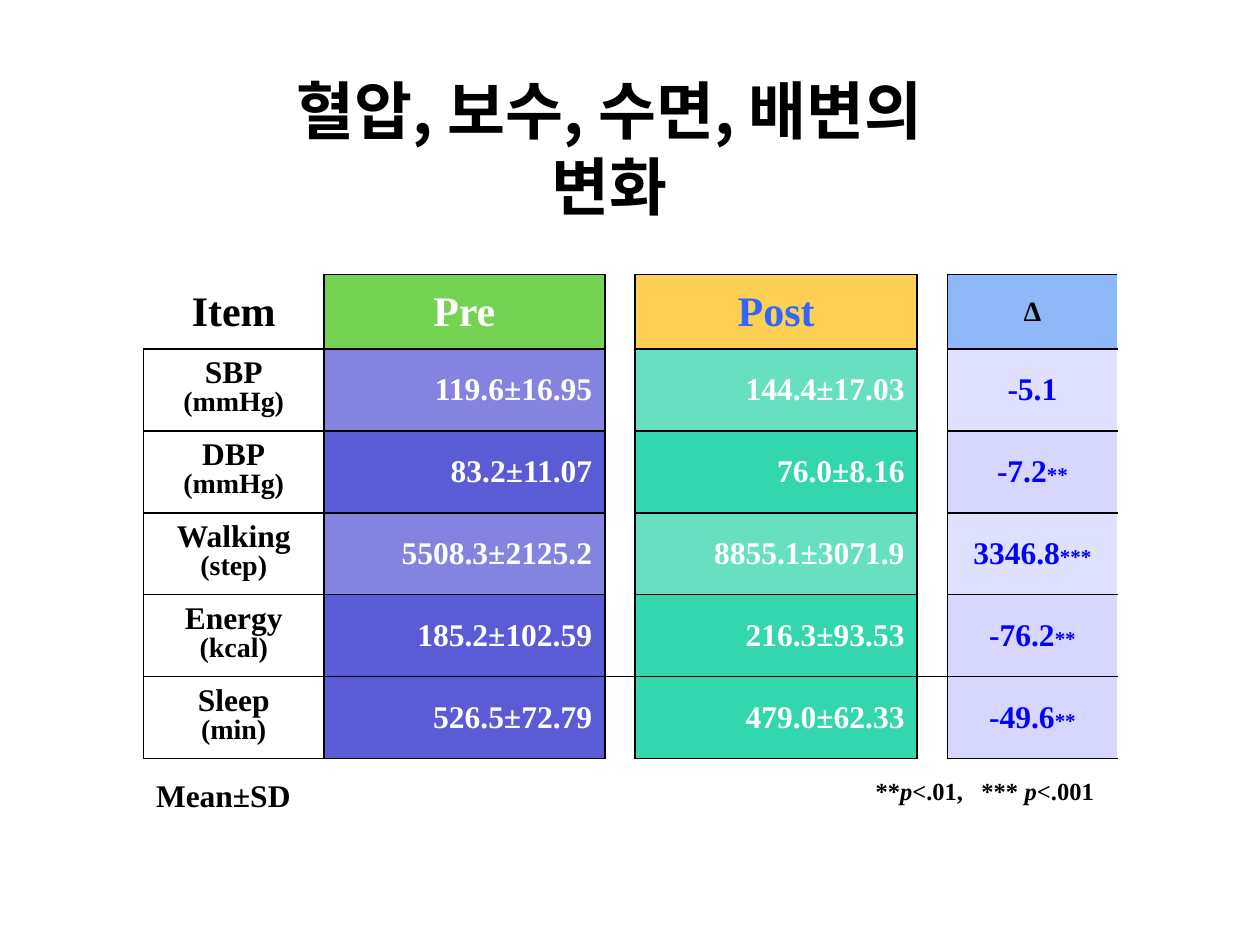
from dataclasses import dataclass

from lxml import etree
from pptx import Presentation
from pptx.dml.color import RGBColor
from pptx.enum.text import MSO_ANCHOR, MSO_AUTO_SIZE, PP_ALIGN
from pptx.oxml.ns import qn
from pptx.util import Inches, Pt

CENTER, LEFT, RIGHT = PP_ALIGN.CENTER, PP_ALIGN.LEFT, PP_ALIGN.RIGHT
TOP, MIDDLE = MSO_ANCHOR.TOP, MSO_ANCHOR.MIDDLE
NO_FIT = MSO_AUTO_SIZE.NONE
TITLE_ONLY = 5


@dataclass(frozen=True)
class Theme:
    body_font: str = "Times New Roman"
    title_font: str = "Noto Sans CJK KR"
    ink: str = "000000"
    paper: str = "FFFFFF"
    pre_header: str = "52C828"
    post_header: str = "FDC529"
    post_label: str = "3366FF"
    change_header: str = "72A7F6"
    pre: str = "3333CC"
    post: str = "00CC99"
    change: str = "CCCCFF"
    change_text: str = "0000FF"
    title_size: int = 36
    header_size: int = 24
    value_size: int = 18
    unit_size: int = 16
    note_size: int = 14
    star_size: int = 12
    border: float = 1


COLUMNS = (1.43, 2.23, 0.24, 2.24, 0.23, 1.35)
ROWS = (0.59,) + (0.65,) * 5
ITEM, PRE, POST, CHANGE = 0, 1, 3, 5
GAPS = (2, 4)
MEASURES = (
    ("SBP", "(mmHg)", "119.6±16.95", "144.4±17.03", "-5.1", "", 60),
    ("DBP", "(mmHg)", "83.2±11.07", "76.0±8.16", "-7.2", "**", 80),
    ("Walking", "(step)", "5508.3±2125.2", "8855.1±3071.9", "3346.8", "***", 60),
    ("Energy", "(kcal)", "185.2±102.59", "216.3±93.53", "-76.2", "**", 80),
    ("Sleep", "(min)", "526.5±72.79", "479.0±62.33", "-49.6", "**", 80),
)


class SlideBuilder:
    def __init__(self, slide, theme):
        self.slide = slide
        self.theme = theme

    def style(self, paragraph, size, color, align, font=None):
        paragraph.alignment = align
        paragraph.font.name = font or self.theme.body_font
        paragraph.font.size = Pt(size)
        paragraph.font.bold = True
        paragraph.font.color.rgb = RGBColor.from_string(color)

    def title(self, wording, left, top, width, height):
        heading = self.slide.shapes.title
        heading.left, heading.top = Inches(left), Inches(top)
        heading.width, heading.height = Inches(width), Inches(height)
        frame = heading.text_frame
        frame.word_wrap = False
        frame.auto_size = NO_FIT
        frame.vertical_anchor = TOP
        paragraph = frame.paragraphs[0]
        self.style(paragraph, self.theme.title_size, self.theme.ink, CENTER,
                   self.theme.title_font)
        run = paragraph.add_run()
        run.text = wording
        etree.SubElement(run.font._element, qn("a:ea"),
                         typeface=self.theme.title_font)

    def note(self, parts, left, top, width, height, size, align):
        box = self.slide.shapes.add_textbox(
            Inches(left), Inches(top), Inches(width), Inches(height))
        box.text_frame.word_wrap = True
        paragraph = box.text_frame.paragraphs[0]
        self.style(paragraph, size, self.theme.ink, align)
        for wording, italic in parts:
            run = paragraph.add_run()
            run.text = wording
            if italic:
                run.font.italic = True

    def table(self, left, top):
        grid = self.slide.shapes.add_table(
            len(ROWS), len(COLUMNS), Inches(left), Inches(top),
            Inches(sum(COLUMNS)), Inches(sum(ROWS))).table
        grid.first_row = False
        grid.horz_banding = False
        for column, width in zip(grid.columns, COLUMNS):
            column.width = Inches(width)
        for row, height in zip(grid.rows, ROWS):
            row.height = Inches(height)
        return grid

    def fill(self, cell, color, opacity=100):
        cell.fill.solid()
        cell.fill.fore_color.rgb = RGBColor.from_string(color)
        if opacity < 100:
            shade = cell._tc.tcPr.find(".//" + qn("a:srgbClr"))
            etree.SubElement(shade, qn("a:alpha"), val=str(opacity * 1000))

    def borders(self, cell, sides, right_color):
        properties = cell._tc.get_or_add_tcPr()
        for position, side in enumerate("LRTB"):
            line = etree.Element(qn("a:ln" + side),
                                 w=str(Pt(self.theme.border)))
            if side in sides:
                color = right_color if side == "R" else self.theme.ink
                paint = etree.SubElement(line, qn("a:solidFill"))
                etree.SubElement(paint, qn("a:srgbClr"), val=color)
            else:
                etree.SubElement(line, qn("a:noFill"))
            properties.insert(position, line)

    def cell_text(self, cell, lines, color, align, spacing=None):
        cell.vertical_anchor = MIDDLE
        frame = cell.text_frame
        for number, (wording, size, stars) in enumerate(lines):
            paragraph = frame.add_paragraph() if number else frame.paragraphs[0]
            self.style(paragraph, size, color, align)
            paragraph.space_before = Pt(round(size * 0.2, 1))
            if spacing:
                paragraph.line_spacing = spacing
            paragraph.add_run().text = wording
            if stars:
                marker = paragraph.add_run()
                marker.text = stars
                marker.font.size = Pt(self.theme.star_size)

    def frame_cells(self, grid):
        last_row = len(ROWS) - 1
        for row in range(len(ROWS)):
            for column in range(len(COLUMNS)):
                sides = "LRTB"
                if column in GAPS:
                    sides = {0: "LRB", last_row: "LRT"}.get(row, "LR")
                elif column == ITEM and row == 0:
                    sides = "RB"
                edge = self.theme.paper if column == CHANGE else self.theme.ink
                cell = grid.cell(row, column)
                if column in GAPS or (column == ITEM and row == 0):
                    cell.fill.background()
                self.borders(cell, sides, edge)
        for column in GAPS:
            grid.cell(0, column).merge(grid.cell(last_row - 1, column))

    def results(self, left, top):
        theme = self.theme
        grid = self.table(left, top)
        headers = (
            (ITEM, "Item", theme.header_size, theme.ink, None),
            (PRE, "Pre", theme.header_size, theme.paper, theme.pre_header),
            (POST, "Post", theme.header_size, theme.post_label, theme.post_header),
            (CHANGE, "∆", theme.unit_size, theme.ink, theme.change_header),
        )
        for column, label, size, color, background in headers:
            cell = grid.cell(0, column)
            self.cell_text(cell, [(label, size, "")], color, CENTER)
            if background:
                self.fill(cell, background, 80)
        for row, measure in enumerate(MEASURES, start=1):
            name, unit, before, after, change, stars, opacity = measure
            item = grid.cell(row, ITEM)
            self.cell_text(item, [(name, theme.value_size, ""),
                                  (unit, theme.unit_size, "")],
                           theme.ink, CENTER, 0.7)
            self.fill(item, theme.paper)
            values = (
                (PRE, before, "", theme.paper, RIGHT, theme.pre),
                (POST, after, "", theme.paper, RIGHT, theme.post),
                (CHANGE, change, stars, theme.change_text, CENTER, theme.change),
            )
            for column, value, marks, color, align, background in values:
                cell = grid.cell(row, column)
                self.cell_text(cell, [(value, theme.value_size, marks)],
                               color, align)
                self.fill(cell, background, opacity)
        self.frame_cells(grid)


def main():
    presentation = Presentation()
    presentation.slide_width = Inches(10)
    presentation.slide_height = Inches(7.5)
    theme = Theme()
    slide = presentation.slides.add_slide(presentation.slide_layouts[TITLE_ONLY])
    builder = SlideBuilder(slide, theme)
    builder.results(1.14, 2.18)
    builder.note([("Mean±SD", False)], 1.14, 6.11, 1.58, 0.4,
                 theme.value_size, LEFT)
    builder.note([("**", False), ("p", True), ("<.01,   *** ", False),
                  ("p", True), ("<.001", False)],
                 5.87, 6.11, 2.91, 0.34, theme.note_size, RIGHT)
    builder.title("혈압, 보수, 수면, 배변의 변화", 2.24, 0.52, 5.2, 1.02)
    presentation.save("out.pptx")


if __name__ == "__main__":
    main()
